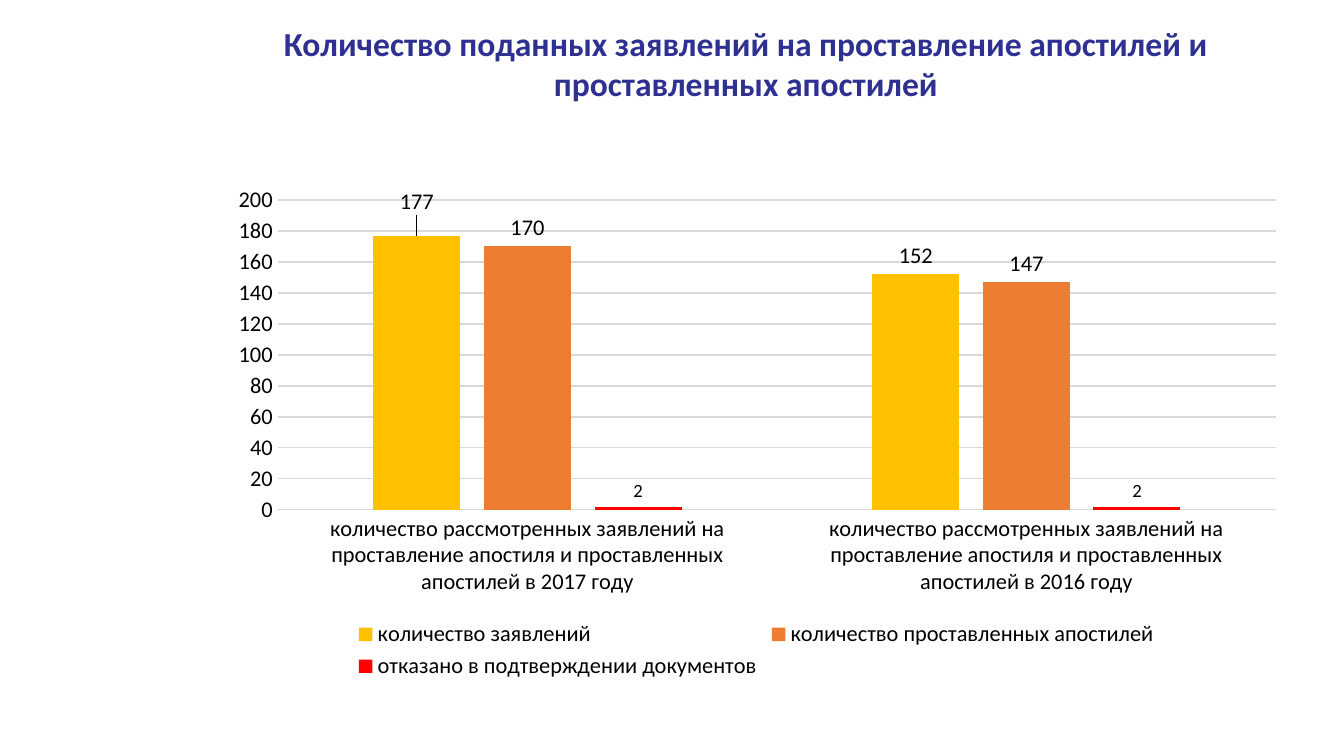
"""Build a slide with a clustered column chart of apostille applications."""
from dataclasses import dataclass

from lxml.etree import SubElement
from pptx import Presentation
from pptx.chart.chart import Chart
from pptx.chart.data import CategoryChartData
from pptx.chart.series import BarSeries
from pptx.dml.color import RGBColor
from pptx.enum.chart import XL_CHART_TYPE, XL_LABEL_POSITION, XL_LEGEND_POSITION, XL_TICK_MARK
from pptx.enum.text import MSO_ANCHOR, PP_ALIGN
from pptx.oxml.ns import qn
from pptx.slide import Slide
from pptx.text.text import Font
from pptx.util import Emu, Pt

FONT = "Calibri"
NAVY = RGBColor(0x2E, 0x31, 0x92)
BLACK = RGBColor(0, 0, 0)
GRID = RGBColor(0xD9, 0xD9, 0xD9)
GOLD = RGBColor(0xFF, 0xC0, 0x00)
ORANGE = RGBColor(0xED, 0x7D, 0x31)
RED = RGBColor(0xFF, 0x00, 0x00)

TITLE = "Количество поданных заявлений на проставление апостилей и проставленных апостилей"
CATEGORY = "количество рассмотренных заявлений на проставление апостиля и проставленных апостилей в {} году"
YEARS = (2017, 2016)


@dataclass(frozen=True)
class Box:
    x: int
    y: int
    w: int
    h: int


@dataclass(frozen=True)
class Measure:
    name: str
    values: tuple[int, ...]
    color: RGBColor
    label_size: int


MEASURES = (
    Measure("количество заявлений", (177, 152), GOLD, 12),
    Measure("количество проставленных апостилей", (170, 147), ORANGE, 12),
    Measure("отказано в подтверждении документов", (2, 2), RED, 10),
)
TITLE_BOX = Box(216, 0, 1060, 126)
CHART_BOX = Box(216, 177, 1081, 508)
PLOT_BOX = Box(278, 200, 998, 310)


def px(n: int) -> Emu:
    return Emu(round(n * 914400 / 134.4))


def set_font(font: Font, size: int, color: RGBColor = BLACK, bold: bool = False) -> None:
    font.name = FONT
    font.size = Pt(size)
    font.bold = bold
    font.color.rgb = color


def add_title(s: Slide, box: Box) -> None:
    sp = s.shapes.add_textbox(px(box.x), px(box.y), px(box.w), px(box.h))
    tf = sp.text_frame
    tf.word_wrap = True
    tf.vertical_anchor = MSO_ANCHOR.MIDDLE
    p = tf.paragraphs[0]
    p.text = TITLE
    p.alignment = PP_ALIGN.CENTER
    set_font(p.font, 18, NAVY, bold=True)


def fix_plot_area(chart: Chart, outer: Box, inner: Box) -> None:
    area = chart._chartSpace.chart.plotArea
    layout = area.find(qn("c:layout"))
    if layout is None:
        layout = SubElement(area, qn("c:layout"))
        area.insert(0, layout)
    manual = SubElement(layout, qn("c:manualLayout"))
    settings = {
        "layoutTarget": "inner",
        "xMode": "edge",
        "yMode": "edge",
        "x": (inner.x - outer.x) / outer.w,
        "y": (inner.y - outer.y) / outer.h,
        "w": inner.w / outer.w,
        "h": inner.h / outer.h,
    }
    for tag, val in settings.items():
        SubElement(manual, qn(f"c:{tag}")).set("val", str(val))


def style_series(series: BarSeries, measure: Measure) -> None:
    series.format.fill.solid()
    series.format.fill.fore_color.rgb = measure.color
    series.invert_if_negative = False
    labels = series.data_labels
    labels.show_value = True
    labels.position = XL_LABEL_POSITION.OUTSIDE_END
    set_font(labels.font, measure.label_size)


def raise_first_label(series: BarSeries, size: int, dy: float) -> None:
    label = series.points[0].data_label
    set_font(label.font, size)
    label.position = XL_LABEL_POSITION.OUTSIDE_END
    element = series._element.find(f".//{qn('c:dLbl')}")
    layout = SubElement(element, qn("c:layout"))
    element.insert(1, layout)
    manual = SubElement(layout, qn("c:manualLayout"))
    for tag, val in (("x", 0), ("y", dy)):
        SubElement(manual, qn(f"c:{tag}")).set("val", str(val))


def style_axes(chart: Chart) -> None:
    cat, val = chart.category_axis, chart.value_axis
    for axis in (cat, val):
        axis.major_tick_mark = axis.minor_tick_mark = XL_TICK_MARK.NONE
        set_font(axis.tick_labels.font, 12)
    val.minimum_scale, val.maximum_scale, val.major_unit = 0, 200, 20
    val.format.line.fill.background()
    for line in (cat.format.line, val.major_gridlines.format.line):
        line.color.rgb = GRID
        line.width = Pt(0.75)


def add_column_chart(s: Slide, box: Box) -> None:
    data = CategoryChartData()
    data.categories = [CATEGORY.format(year) for year in YEARS]
    for measure in MEASURES:
        data.add_series(measure.name, measure.values)
    chart = s.shapes.add_chart(
        XL_CHART_TYPE.COLUMN_CLUSTERED, px(box.x), px(box.y), px(box.w), px(box.h), data
    ).chart
    set_font(chart.font, 10)
    chart.has_title = False
    chart.has_legend = True
    chart.legend.position = XL_LEGEND_POSITION.BOTTOM
    chart.legend.include_in_layout = False
    set_font(chart.legend.font, 12)
    plot = chart.plots[0]
    plot.gap_width, plot.overlap = 219, -27
    plot.vary_by_categories = False
    for series, measure in zip(plot.series, MEASURES):
        style_series(series, measure)
    raise_first_label(plot.series[0], MEASURES[0].label_size, -0.03)
    style_axes(chart)
    fix_plot_area(chart, box, PLOT_BOX)


def main() -> None:
    prs = Presentation()
    prs.slide_width, prs.slide_height = px(1344), px(756)
    s = prs.slides.add_slide(prs.slide_layouts[6])
    add_title(s, TITLE_BOX)
    add_column_chart(s, CHART_BOX)
    prs.save("out.pptx")


if __name__ == "__main__":
    main()
